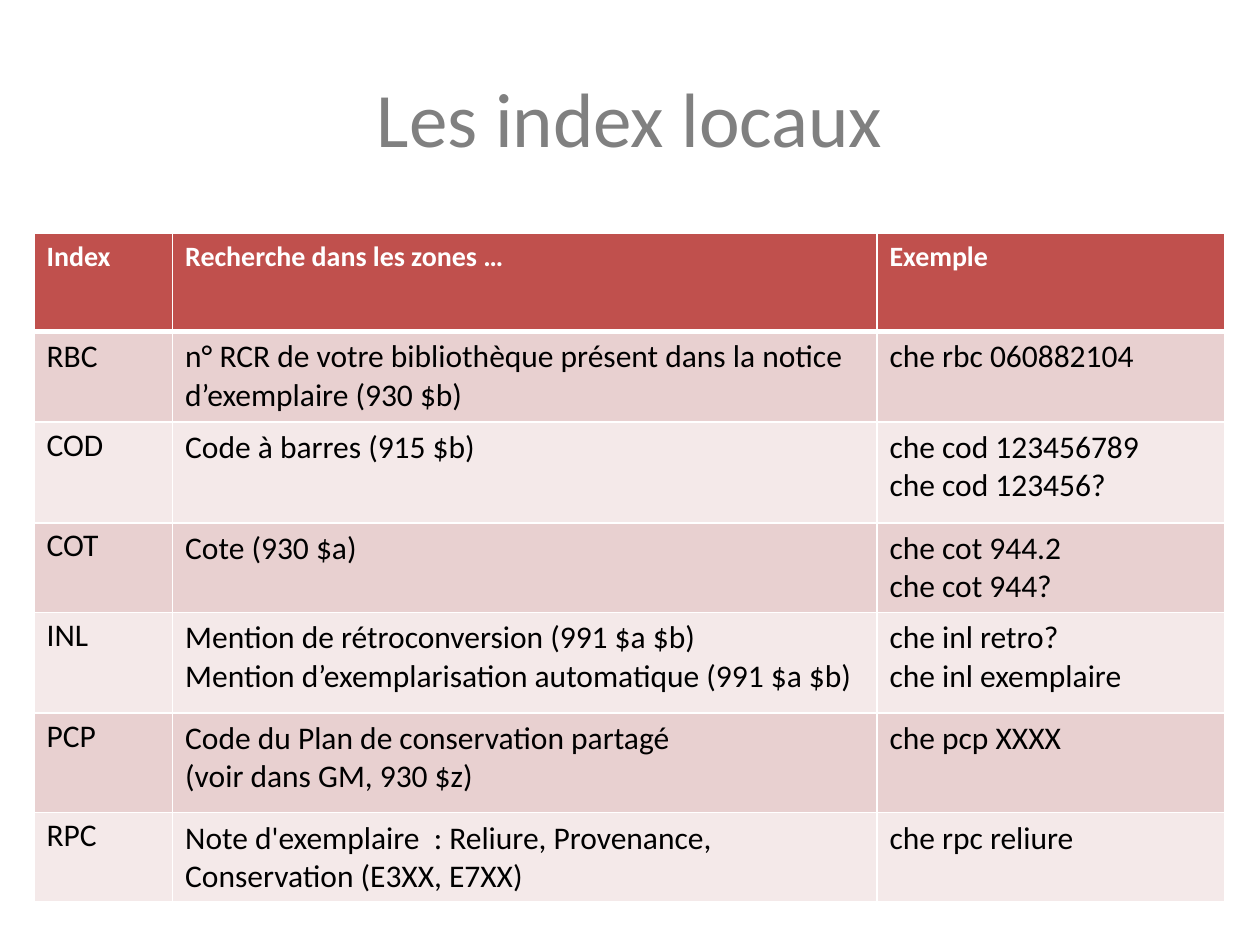
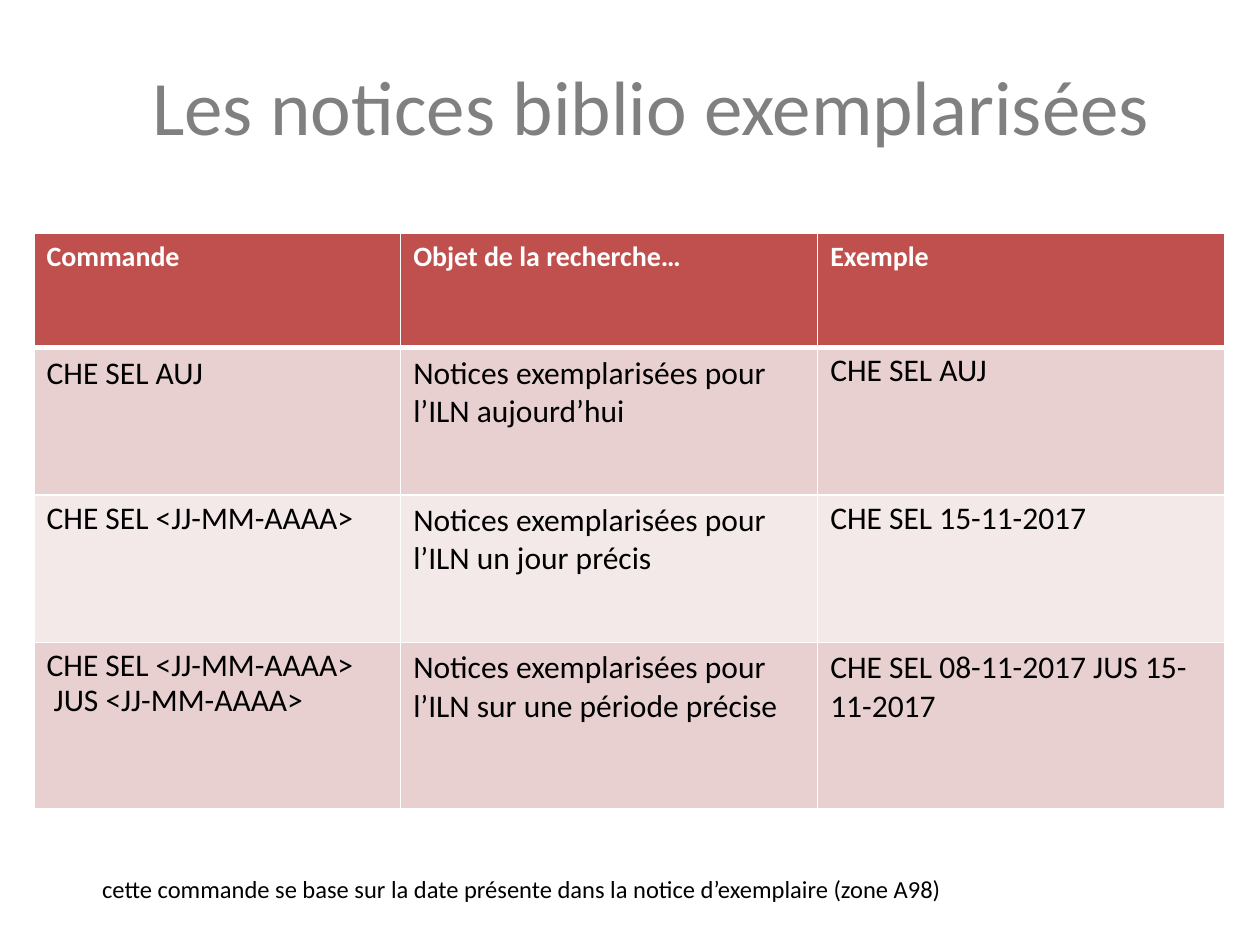
from dataclasses import dataclass
from functools import partial

import lxml.etree
import pptx
import pptx.dml.color
import pptx.enum.text
import pptx.oxml.ns
import pptx.presentation
import pptx.slide
import pptx.table
import pptx.text.text
import pptx.util

COLORS = {
    "title": "808080",
    "header": "C0504D",
    "odd_row": "E8D0D0",
    "even_row": "F4E9E9",
    "white": "FFFFFF",
    "text": "000000",
}
FONT = "Calibri"
SLIDE_WIDTH = pptx.util.Inches(10)
SLIDE_HEIGHT = pptx.util.Inches(7.5)
GRID_COLUMNS = 100
GRID_ROWS = 75
TITLE_ONLY_LAYOUT = 5
TABLE_LEFT = 2.7
TABLE_TOP = 18.5
THIN_BORDER = 1
HEADER_BORDER = 3


@dataclass(frozen=True)
class Box:
    left: float
    top: float
    width: float
    height: float


@dataclass(frozen=True)
class Cell:
    text: str
    line_spacing: float = 1.0


@dataclass(frozen=True)
class CommandTable:
    title: str
    title_box: Box
    widths: tuple[float, ...]
    heights: tuple[float, ...]
    rows: tuple[tuple[Cell, ...], ...]


Tight = partial(Cell, line_spacing=0.9)

LOCAL_INDEXES = CommandTable(
    title="Les index locaux",
    title_box=Box(5, 3, 90, 12.5),
    widths=(11, 55.9, 27.6),
    heights=(7.8, 7.2, 8, 7.1, 8, 7.9, 7),
    rows=(
        (Cell("Index"), Cell("Recherche dans les zones …"), Cell("Exemple")),
        (
            Cell("RBC"),
            Cell("n° RCR de votre bibliothèque présent dans la notice d’exemplaire (930 $b)"),
            Cell("che rbc 060882104"),
        ),
        (
            Tight("COD"),
            Cell("Code à barres (915 $b)"),
            Cell("che cod 123456789\nche cod 123456?"),
        ),
        (Tight("COT"), Cell("Cote (930 $a)"), Cell("che cot 944.2\nche cot 944?")),
        (
            Tight("INL"),
            Cell(
                "Mention de rétroconversion (991 $a $b)\n"
                "Mention d’exemplarisation automatique (991 $a $b)"
            ),
            Cell("che inl retro?\nche inl exemplaire"),
        ),
        (
            Tight("PCP"),
            Cell("Code du Plan de conservation partagé\n(voir dans GM, 930 $z)"),
            Cell("che pcp XXXX"),
        ),
        (
            Tight("RPC"),
            Cell("Note d'exemplaire  : Reliure, Provenance, Conservation (E3XX, E7XX)"),
            Cell("che rpc reliure"),
        ),
    ),
)

LINKED_RECORDS = CommandTable(
    title="Les notices biblio exemplarisées",
    title_box=Box(6.7, 2.1, 90, 12.5),
    widths=(29.1, 33.1, 32.3),
    heights=(9.1, 11.7, 11.7, 13.2),
    rows=(
        (Cell("Commande"), Cell("Objet de la recherche…"), Cell("Exemple")),
        (
            Cell("CHE SEL AUJ"),
            Cell("Notices exemplarisées pour l’ILN aujourd’hui"),
            Tight("CHE SEL AUJ"),
        ),
        (
            Tight("CHE SEL <JJ-MM-AAAA>"),
            Cell("Notices exemplarisées pour l’ILN un jour précis"),
            Tight("CHE SEL 15-11-2017"),
        ),
        (
            Tight("CHE SEL <JJ-MM-AAAA>\n JUS <JJ-MM-AAAA>"),
            Cell("Notices exemplarisées pour l’ILN sur une période précise"),
            Cell("CHE SEL 08-11-2017 JUS 15-11-2017"),
        ),
    ),
)

DATE_NOTE = "cette commande se base sur la date présente dans la notice d’exemplaire (zone A98)"
DATE_NOTE_BOX = Box(6.2, 67, 91.8, 5.7)


def columns(count: float) -> int:
    return round(SLIDE_WIDTH * count / GRID_COLUMNS)


def rows(count: float) -> int:
    return round(SLIDE_HEIGHT * count / GRID_ROWS)


def place(box: Box) -> tuple[int, int, int, int]:
    return columns(box.left), rows(box.top), columns(box.width), rows(box.height)


def rgb(name: str) -> pptx.dml.color.RGBColor:
    return pptx.dml.color.RGBColor.from_string(COLORS[name])


def format_text(
    text_frame: pptx.text.text.TextFrame,
    size: float,
    color: str,
    bold: bool = False,
    line_spacing: float = 1.0,
) -> None:
    for paragraph in text_frame.paragraphs:
        paragraph.line_spacing = line_spacing
        paragraph.font.name = FONT
        paragraph.font.size = pptx.util.Pt(size)
        paragraph.font.bold = bold
        paragraph.font.color.rgb = rgb(color)


def add_border(cell: pptx.table._Cell, side: str, width: float) -> None:
    qualified = pptx.oxml.ns.qn
    properties = cell._tc.get_or_add_tcPr()
    line = lxml.etree.SubElement(
        properties, qualified(f"a:ln{side}"), w=str(pptx.util.Pt(width))
    )
    fill = lxml.etree.SubElement(line, qualified("a:solidFill"))
    lxml.etree.SubElement(fill, qualified("a:srgbClr"), val=COLORS["white"])


def format_cell(cell: pptx.table._Cell, content: Cell, row_index: int) -> None:
    is_header = row_index == 0
    border_widths = {
        "L": THIN_BORDER,
        "R": THIN_BORDER,
        "T": HEADER_BORDER if row_index == 1 else THIN_BORDER,
        "B": HEADER_BORDER if is_header else THIN_BORDER,
    }
    for side, width in border_widths.items():
        add_border(cell, side, width)
    band = "odd_row" if row_index % 2 else "even_row"
    cell.fill.solid()
    cell.fill.fore_color.rgb = rgb("header" if is_header else band)
    cell.text = content.text
    format_text(
        cell.text_frame,
        size=16 if is_header else 18,
        color="white" if is_header else "text",
        bold=is_header,
        line_spacing=content.line_spacing,
    )


def add_table(slide: pptx.slide.Slide, content: CommandTable) -> None:
    box = Box(TABLE_LEFT, TABLE_TOP, sum(content.widths), sum(content.heights))
    table = slide.shapes.add_table(
        len(content.heights), len(content.widths), *place(box)
    ).table
    for column, width in zip(table.columns, content.widths):
        column.width = columns(width)
    for row_index, (row, height) in enumerate(zip(table.rows, content.heights)):
        row.height = rows(height)
        for cell, cell_content in zip(row.cells, content.rows[row_index]):
            format_cell(cell, cell_content, row_index)


def add_title(slide: pptx.slide.Slide, text: str, box: Box) -> None:
    title = slide.shapes.title
    title.left, title.top, title.width, title.height = place(box)
    title.text = text
    text_frame = title.text_frame
    text_frame.auto_size = pptx.enum.text.MSO_AUTO_SIZE.NONE
    text_frame.vertical_anchor = pptx.enum.text.MSO_ANCHOR.MIDDLE
    text_frame.paragraphs[0].alignment = pptx.enum.text.PP_ALIGN.CENTER
    format_text(text_frame, size=44, color="title")


def add_note(slide: pptx.slide.Slide, text: str, box: Box) -> None:
    text_frame = slide.shapes.add_textbox(*place(box)).text_frame
    text_frame.word_wrap = True
    text_frame.vertical_anchor = pptx.enum.text.MSO_ANCHOR.BOTTOM
    text_frame.margin_left = columns(1.9)
    text_frame.margin_bottom = rows(1)
    text_frame.text = text
    format_text(text_frame, size=14, color="text")


def add_table_slide(
    presentation: pptx.presentation.Presentation, content: CommandTable
) -> pptx.slide.Slide:
    slide = presentation.slides.add_slide(presentation.slide_layouts[TITLE_ONLY_LAYOUT])
    add_title(slide, content.title, content.title_box)
    add_table(slide, content)
    return slide


def main() -> None:
    presentation = pptx.Presentation()
    presentation.slide_width = SLIDE_WIDTH
    presentation.slide_height = SLIDE_HEIGHT
    add_table_slide(presentation, LOCAL_INDEXES)
    records_slide = add_table_slide(presentation, LINKED_RECORDS)
    add_note(records_slide, DATE_NOTE, DATE_NOTE_BOX)
    presentation.save("out.pptx")


if __name__ == "__main__":
    main()
